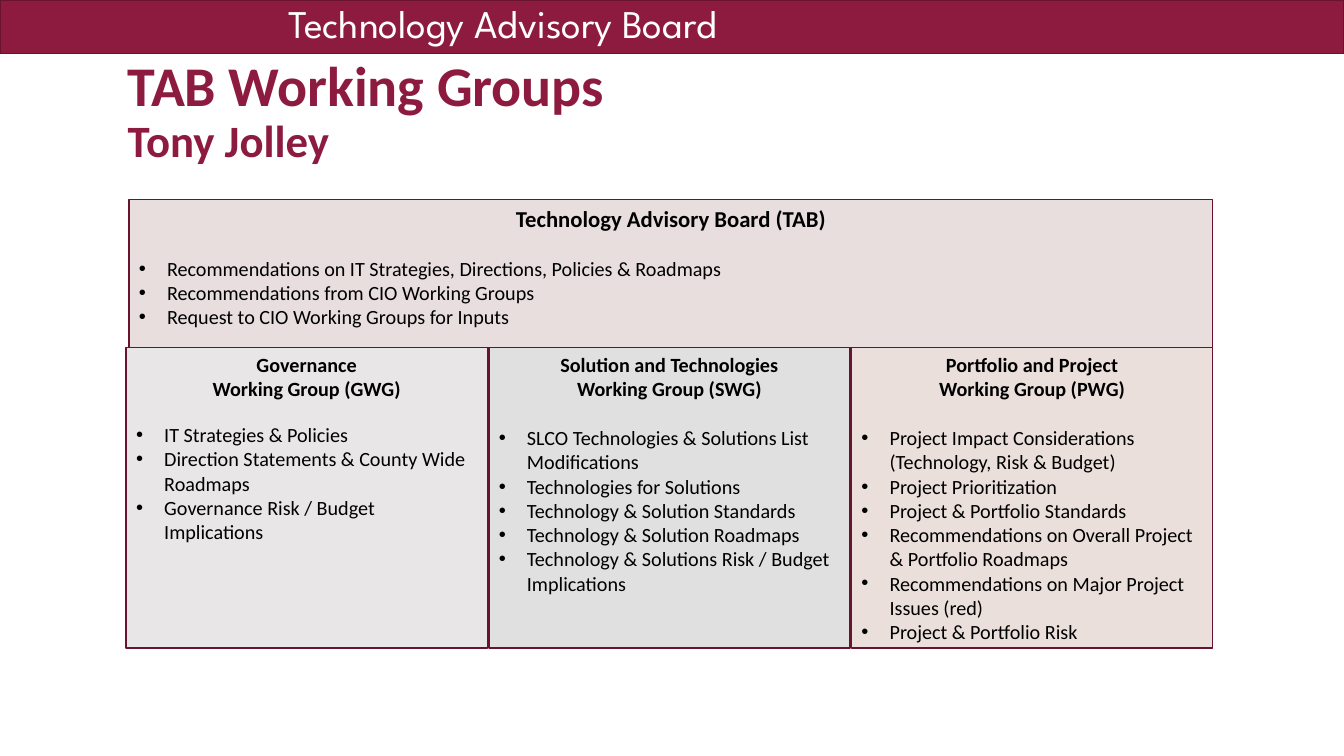
from dataclasses import dataclass

from lxml.etree import SubElement
from pptx import Presentation
from pptx.dml.color import RGBColor
from pptx.enum.shapes import MSO_SHAPE
from pptx.enum.text import MSO_ANCHOR, PP_ALIGN
from pptx.oxml.ns import qn
from pptx.shapes.autoshape import Shape
from pptx.slide import Slide
from pptx.text.text import TextFrame
from pptx.util import Cm, Length, Pt


@dataclass(frozen=True)
class Theme:
    maroon: str = "8D1B40"
    border: str = "68142F"
    white: str = "FFFFFF"
    black: str = "000000"
    board_fill: str = "E8DEDE"
    governance_fill: str = "E9E6E7"
    solution_fill: str = "E1E0E0"
    portfolio_fill: str = "EBDFDB"
    banner_font: str = "League Spartan"
    body_font: str = "Calibri"
    banner_size: float = 28
    title_size: float = 40
    presenter_size: float = 32
    board_size: float = 16.2
    body_size: float = 14.4


THEME = Theme()


@dataclass(frozen=True)
class Panel:
    heading: tuple[str, ...]
    duties: tuple[str, ...]
    fill: str
    heading_size: float = THEME.body_size
    heading_gap: float = 17.6


BOARD = Panel(
    ("Technology Advisory Board (TAB)",),
    (
        "Recommendations on IT Strategies, Directions, Policies & Roadmaps",
        "Recommendations from CIO Working Groups",
        "Request to CIO Working Groups for Inputs",
    ),
    THEME.board_fill,
    heading_size=THEME.board_size,
)

WORKING_GROUPS = (
    Panel(
        ("Governance", "Working Group (GWG)"),
        (
            "IT Strategies & Policies",
            "Direction Statements & County Wide Roadmaps",
            "Governance Risk / Budget Implications",
        ),
        THEME.governance_fill,
        heading_gap=15.4,
    ),
    Panel(
        ("Solution and Technologies", "Working Group (SWG)"),
        (
            "SLCO Technologies & Solutions List Modifications",
            "Technologies for Solutions",
            "Technology & Solution Standards",
            "Technology & Solution Roadmaps",
            "Technology & Solutions Risk / Budget Implications",
        ),
        THEME.solution_fill,
    ),
    Panel(
        ("Portfolio and Project", "Working Group (PWG)"),
        (
            "Project Impact Considerations (Technology, Risk & Budget)",
            "Project Prioritization",
            "Project & Portfolio Standards",
            "Recommendations on Overall Project & Portfolio Roadmaps",
            "Recommendations on Major Project Issues (red)",
            "Project & Portfolio Risk",
        ),
        THEME.portfolio_fill,
    ),
)

GROUP_LEFT, GROUP_PITCH, GROUP_WIDTH = 3.18, 9.14, 9.1
BOARD_TOP, GROUP_TOP, GROUP_HEIGHT = 5.03, 8.76, 7.57


def write_text(
    frame: TextFrame,
    text: str,
    *,
    size: float,
    color: str = THEME.black,
    font: str = THEME.body_font,
    bold: bool = False,
    align: PP_ALIGN = PP_ALIGN.LEFT,
    bullet: bool = False,
    space_before: float = 0,
    line_spacing: float = 1.0,
) -> None:
    """Fill the frame's empty first paragraph, or append a new one."""
    first = frame.paragraphs[0]
    paragraph = frame.add_paragraph() if first.runs else first
    paragraph.alignment = align
    paragraph.line_spacing = line_spacing
    paragraph.space_before = Pt(space_before)
    if bullet:
        properties = paragraph._p.get_or_add_pPr()
        indent = Cm(0.71)
        properties.set("marL", str(indent))
        properties.set("indent", str(-indent))
        SubElement(properties, qn("a:buFont"), typeface="Arial")
        SubElement(properties, qn("a:buChar"), char="•")
    run = paragraph.add_run()
    run.text = text
    run.font.name = font
    run.font.size = Pt(size)
    run.font.bold = bold
    run.font.color.rgb = RGBColor.from_string(color)


def add_rectangle(
    slide: Slide, left: Length, top: Length, width: Length, height: Length, fill: str
) -> Shape:
    shape = slide.shapes.add_shape(MSO_SHAPE.RECTANGLE, left, top, width, height)
    shape.shadow.inherit = False
    shape.fill.solid()
    shape.fill.fore_color.rgb = RGBColor.from_string(fill)
    shape.line.color.rgb = RGBColor.from_string(THEME.border)
    shape.line.width = Pt(1)
    return shape


def add_panel(
    slide: Slide, panel: Panel, left: Length, top: Length, width: Length, height: Length
) -> None:
    frame = add_rectangle(slide, left, top, width, height, panel.fill).text_frame
    frame.word_wrap = True
    frame.vertical_anchor = MSO_ANCHOR.TOP
    for line in panel.heading:
        write_text(frame, line, size=panel.heading_size, bold=True, align=PP_ALIGN.CENTER)
    for index, duty in enumerate(panel.duties):
        gap = 0 if index else panel.heading_gap
        write_text(frame, duty, size=THEME.body_size, bullet=True, space_before=gap)


def add_banner(slide: Slide, width: Length) -> None:
    add_rectangle(slide, Cm(0), Cm(0), width, Cm(1.35), THEME.maroon)
    label = slide.shapes.add_textbox(Cm(7.01), Cm(-0.13), Cm(13.67), Cm(1.45))
    label.text_frame.word_wrap = False
    write_text(label.text_frame, "Technology Advisory Board", size=THEME.banner_size,
               color=THEME.white, font=THEME.banner_font)


def add_title(slide: Slide) -> None:
    frame = slide.shapes.add_textbox(Cm(2.97), Cm(1.35), Cm(27.94), Cm(4.47)).text_frame
    frame.word_wrap = True
    for text, size in (
        ("TAB Working Groups", THEME.title_size),
        ("Tony Jolley", THEME.presenter_size),
    ):
        write_text(frame, text, size=size, color=THEME.maroon, bold=True, line_spacing=0.9)


def main() -> None:
    presentation = Presentation()
    presentation.slide_width, presentation.slide_height = Cm(33.87), Cm(19.05)
    slide = presentation.slides.add_slide(presentation.slide_layouts[6])
    add_banner(slide, presentation.slide_width)
    add_title(slide)
    add_panel(slide, BOARD, Cm(3.25), Cm(BOARD_TOP), Cm(27.31), Cm(GROUP_TOP - BOARD_TOP))
    for index, group in enumerate(WORKING_GROUPS):
        left = Cm(GROUP_LEFT + index * GROUP_PITCH)
        add_panel(slide, group, left, Cm(GROUP_TOP), Cm(GROUP_WIDTH), Cm(GROUP_HEIGHT))
    presentation.save("out.pptx")


if __name__ == "__main__":
    main()
